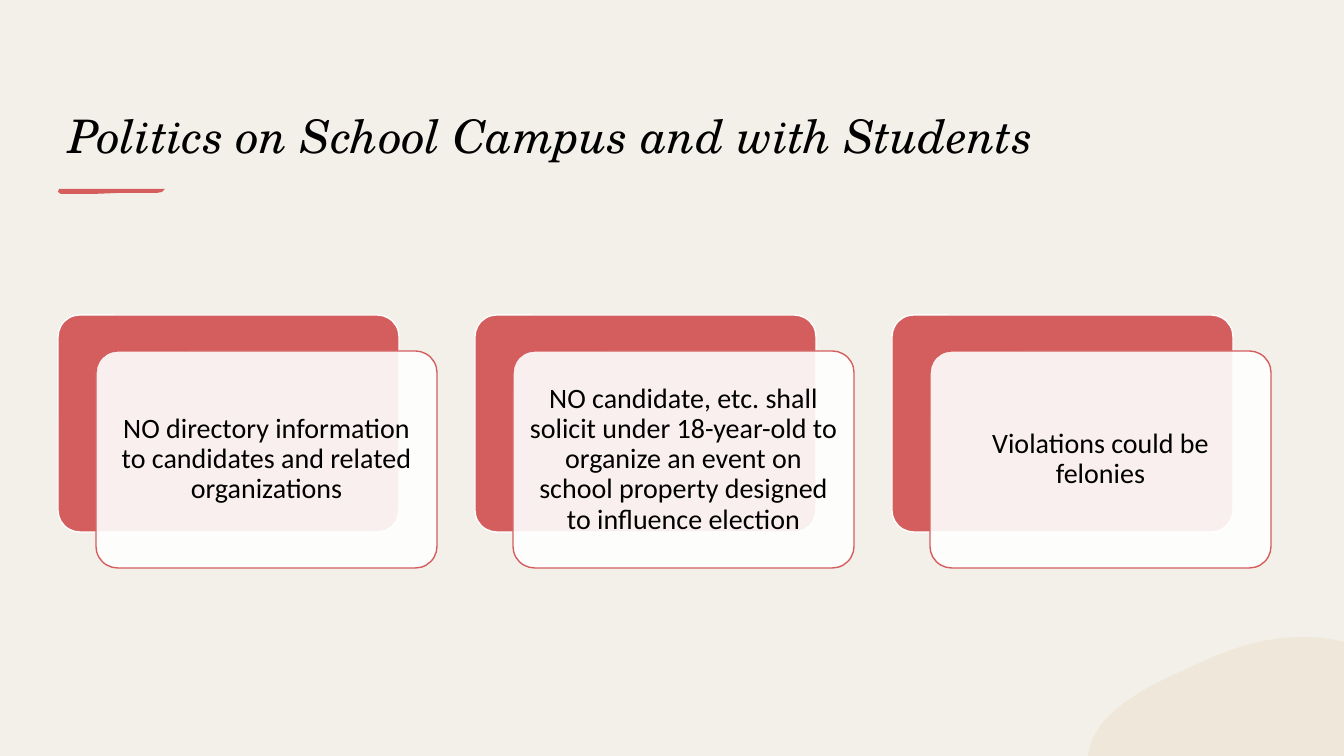
from lxml.etree import SubElement
from pptx import Presentation
from pptx.dml.color import RGBColor
from pptx.enum.shapes import MSO_SHAPE
from pptx.enum.text import MSO_ANCHOR, PP_ALIGN
from pptx.oxml.ns import qn
from pptx.util import Pt

PX = 914400 / 100.8
WIDTH, HEIGHT = 1344, 756
PAPER, RED, WHITE, BLACK, SAND = "F3F0E9", "D45E5E", "FFFFFF", "000000", "E7CFAF"
CARDS = [
    "NO directory information to candidates and related organizations",
    "NO candidate, etc. shall solicit under 18-year-old to organize an event on "
    "school property designed to influence election",
    "Violations could be felonies",
]


def px(n):
    return round(n * PX)


def rgb(color):
    return RGBColor.from_string(color)


def paint(s, fill, line=None, alpha=None):
    """Set fill, outline and opacity (percent), without a shadow."""
    s.shadow.inherit = False
    s.fill.solid()
    s.fill.fore_color.rgb = rgb(fill)
    if alpha is not None:
        color = s.fill._xPr.find(qn("a:solidFill"))[0]
        SubElement(color, qn("a:alpha")).set("val", str(alpha * 1000))
    if line:
        s.line.color.rgb = rgb(line)
        s.line.width = Pt(1)
    else:
        s.line.fill.background()


def add_round_box(slide, x, y, w, h, **look):
    s = slide.shapes.add_shape(MSO_SHAPE.ROUNDED_RECTANGLE, px(x), px(y), px(w), px(h))
    s.adjustments[0] = 0.1
    paint(s, **look)
    return s


def write(s, text, size, font, italic=False, align=PP_ALIGN.LEFT,
          anchor=MSO_ANCHOR.MIDDLE, inset=(10, 5), spacing=1.0):
    tf = s.text_frame
    tf.word_wrap = True
    tf.vertical_anchor = anchor
    tf.margin_left = tf.margin_right = px(inset[0])
    tf.margin_top = tf.margin_bottom = px(inset[1])
    p = tf.paragraphs[0]
    p.alignment = align
    p.line_spacing = spacing
    r = p.add_run()
    r.text = text
    r.font.size = Pt(size)
    r.font.name = font
    r.font.italic = italic
    r.font.color.rgb = rgb(BLACK)


def curve(a, b, c, d, steps=24):
    """Points along a cubic curve, after its start."""
    points = []
    for i in range(1, steps + 1):
        t = i / steps
        u = 1 - t
        points.append(tuple(u**3 * m + 3 * u * u * t * n + 3 * u * t * t * o + t**3 * q
                            for m, n, o, q in zip(a, b, c, d)))
    return points


def add_outline(slide, x, y, points, **look):
    points = [(px(x + dx), px(y + dy)) for dx, dy in points]
    builder = slide.shapes.build_freeform(*points[0], scale=1.0)
    builder.add_line_segments(points[1:], close=True)
    paint(builder.convert_to_shape(), **look)


def add_backdrop(slide, w, h):
    slide.background.fill.solid()
    slide.background.fill.fore_color.rgb = rgb(PAPER)
    blob_w, blob_h = 256, 119
    blob = [(0, 119), (1, 114)]
    blob += curve(blob[-1], (8, 76), (54, 52), (96, 33))
    blob += curve(blob[-1], (132, 16), (169, 0), (214, 0))
    blob += curve(blob[-1], (223, 0), (233, 1), (243, 2))
    blob += [(256, 5), (256, 119)]
    add_outline(slide, w - blob_w, h - blob_h, blob, fill=SAND, alpha=25)


def add_heading(slide, x, y, w, h):
    s = slide.shapes.add_textbox(px(x), px(y), px(w), px(h))
    write(s, "Politics on School Campus and with Students", 33, "TeX Gyre Schola",
          italic=True, anchor=MSO_ANCHOR.BOTTOM)
    stroke = [(1, 0), (107, 0), (104, 3), (99, 4), (60, 4), (34, 5), (3, 5), (0, 3)]
    add_outline(slide, x, y + h + 21, stroke, fill=RED)


def add_card(slide, x, y, w, h, text):
    """A red card with a translucent white card set over its lower right."""
    dx, dy = 38, 36
    add_round_box(slide, x, y, w - dx, h - dy, fill=RED, line=WHITE)
    front = add_round_box(slide, x + dx, y + dy, w - dx, h - dy,
                          fill=WHITE, line=RED, alpha=90)
    write(front, text, 20, "Calibri", align=PP_ALIGN.CENTER, inset=(9, 8), spacing=0.9)


def add_cards(slide, x, y, w, h, gap):
    card_w = (w - gap * (len(CARDS) - 1)) / len(CARDS)
    for i, text in enumerate(CARDS):
        add_card(slide, x + i * (card_w + gap), y, card_w, h, text)


def main():
    prs = Presentation()
    prs.slide_width, prs.slide_height = px(WIDTH), px(HEIGHT)
    slide = prs.slides.add_slide(prs.slide_layouts[6])
    add_backdrop(slide, WIDTH, HEIGHT)
    add_heading(slide, 58, 77, 1111, 91)
    add_cards(slide, 58, 315, 1213, 253, gap=38)
    prs.save("out.pptx")


if __name__ == "__main__":
    main()
